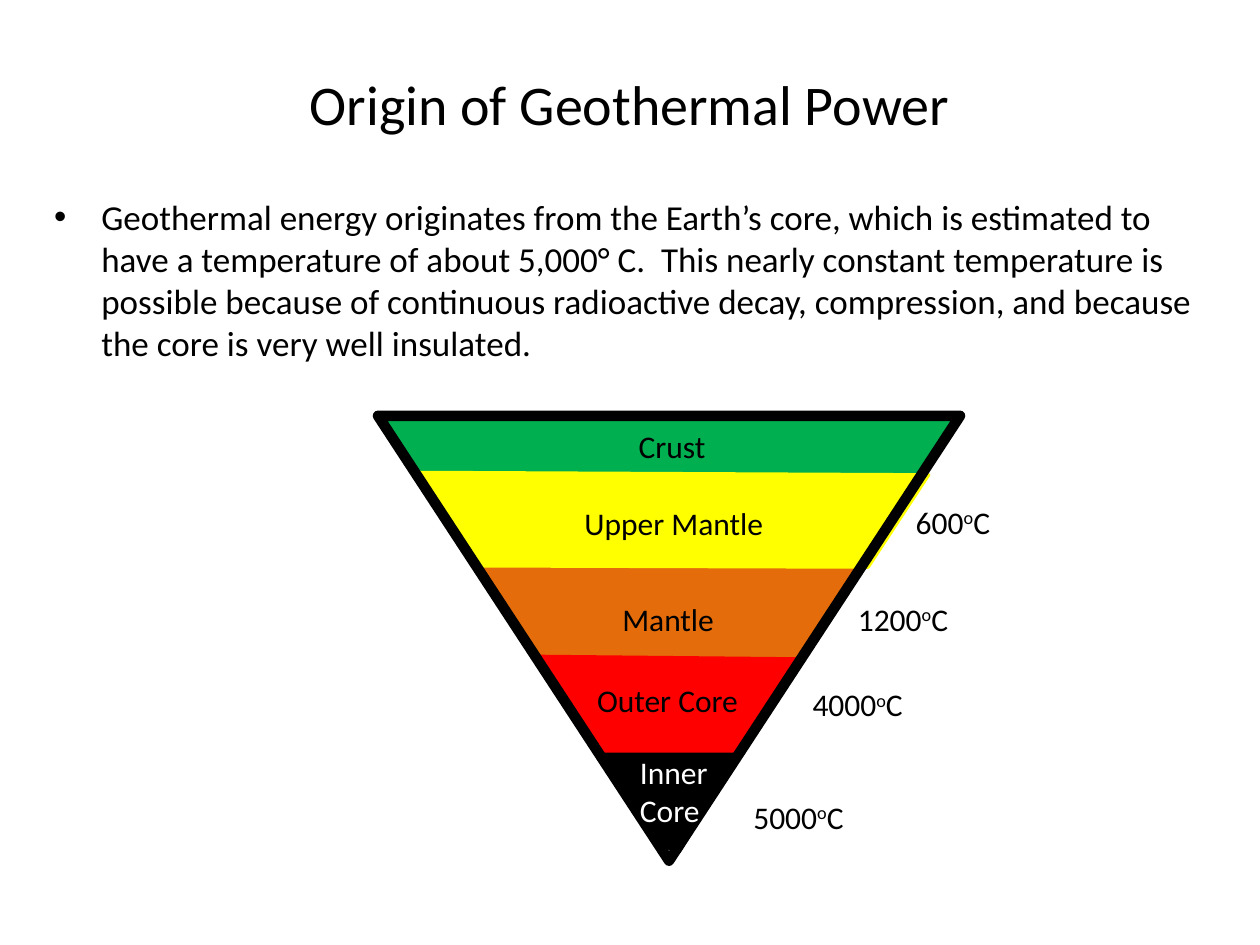
"""Build a slide showing the Earth's layers as an inverted triangle with temperatures."""
from dataclasses import dataclass

from lxml.etree import SubElement
from pptx import Presentation
from pptx.dml.color import RGBColor
from pptx.enum.shapes import MSO_SHAPE
from pptx.enum.text import MSO_ANCHOR, PP_ALIGN
from pptx.oxml.ns import qn
from pptx.util import Pt


@dataclass(frozen=True)
class Theme:
    font: str = "Calibri"
    title: int = 32
    body: int = 20
    label: int = 18
    black: str = "000000"
    white: str = "FFFFFF"
    crust: str = "00B050"
    upper: str = "FFFF00"
    mantle: str = "E46C0A"
    outer: str = "FF0000"


theme = Theme()
prs = Presentation()
prs.slide_width, prs.slide_height = Pt(720), Pt(540)
s = prs.slides.add_slide(prs.slide_layouts[6])


def add_text(text, *, box, size=theme.label, color=theme.black,
             align=PP_ALIGN.LEFT, anchor=MSO_ANCHOR.TOP, raised=""):
    tb = s.shapes.add_textbox(*(Pt(v) for v in box))
    tf = tb.text_frame
    tf.word_wrap = True
    tf.vertical_anchor = anchor
    p = tf.paragraphs[0]
    p.alignment = align
    runs = [text, raised, "C"] if raised else [text]
    for part in runs:
        r = p.add_run()
        r.text = part
        r.font.name = theme.font
        r.font.size = Pt(size)
        r.font.color.rgb = RGBColor.from_string(color)
        if raised and part == raised:
            r.font._element.set("baseline", "30000")
    return p


layers = [
    (theme.crust, 3, [(221.8, 238.5), (340, 238.5), (545, 239), (525.6, 269.3),
                      (244.8, 269.3), (239.8, 267.8)]),
    (theme.black, 2, [(342, 429.1), (423.4, 429.1), (388.1, 486.7), (378, 483.1)]),
    (theme.mantle, 2, [(272.2, 321.8), (493.2, 322.6), (458.6, 375.8), (307.4, 375.1)]),
    (theme.upper, 2, [(239, 270), (530.6, 271.4), (496.1, 324), (273.6, 323.3)]),
    (theme.outer, 2, [(307.4, 375.1), (458.6, 376.6), (423.4, 429.1), (343.4, 429.1)]),
]
for color, width, points in layers:
    corners = [(Pt(x), Pt(y)) for x, y in points]
    builder = s.shapes.build_freeform(*corners[0])
    builder.add_line_segments(corners[1:], close=True)
    sp = builder.convert_to_shape()
    sp.shadow.inherit = False
    sp.fill.solid()
    sp.fill.fore_color.rgb = RGBColor.from_string(color)
    sp.line.color.rgb = RGBColor.from_string(color)
    sp.line.width = Pt(width)

outline = s.shapes.add_shape(MSO_SHAPE.ISOSCELES_TRIANGLE,
                             Pt(216), Pt(237.6), Pt(332.6), Pt(254.2))
outline.rotation = 180
outline.shadow.inherit = False
outline.fill.background()
outline.line.color.rgb = RGBColor.from_string(theme.black)
outline.line.width = Pt(6)
SubElement(outline.line._get_or_add_ln(), qn("a:round"))

names = [
    ("Crust", 357.8, 240.5, 65.5, theme.black),
    ("Upper Mantle", 326.9, 284.4, 130.3, theme.black),
    ("Mantle", 348.5, 339.1, 71.3, theme.black),
    ("Outer Core", 334.1, 385.9, 110.9, theme.black),
    ("Inner Core", 358.6, 427, 85, theme.white),
]
for name, x, y, w, color in names:
    add_text(name, box=(x, y, w, 28.8), color=color)

temperatures = [
    ("600", 516.2, 283.7, 66.2),
    ("1200", 483.1, 339.1, 77.8),
    ("4000", 457.2, 388.1, 85.7),
    ("5000", 423.4, 452.2, 77),
]
for degrees, x, y, w in temperatures:
    add_text(degrees, box=(x, y, w, 28.8), raised="o")

p = add_text(
    "Geothermal energy originates from the Earth’s core, which is estimated to have "
    "a temperature of about 5,000° C.  This nearly constant temperature is possible "
    "because of continuous radioactive decay, compression, and because the core is "
    "very well insulated.",
    box=(23.8, 108, 666, 104.4), size=theme.body)
pPr = p._p.get_or_add_pPr()
pPr.set("marL", str(Pt(27)))
pPr.set("indent", str(-Pt(27)))
SubElement(pPr, qn("a:buFont")).set("typeface", "Arial")
SubElement(pPr, qn("a:buChar")).set("char", "•")

add_text("Origin of Geothermal Power", box=(36, 21.6, 648, 74.2), size=theme.title,
         align=PP_ALIGN.CENTER, anchor=MSO_ANCHOR.MIDDLE)

prs.save("out.pptx")
